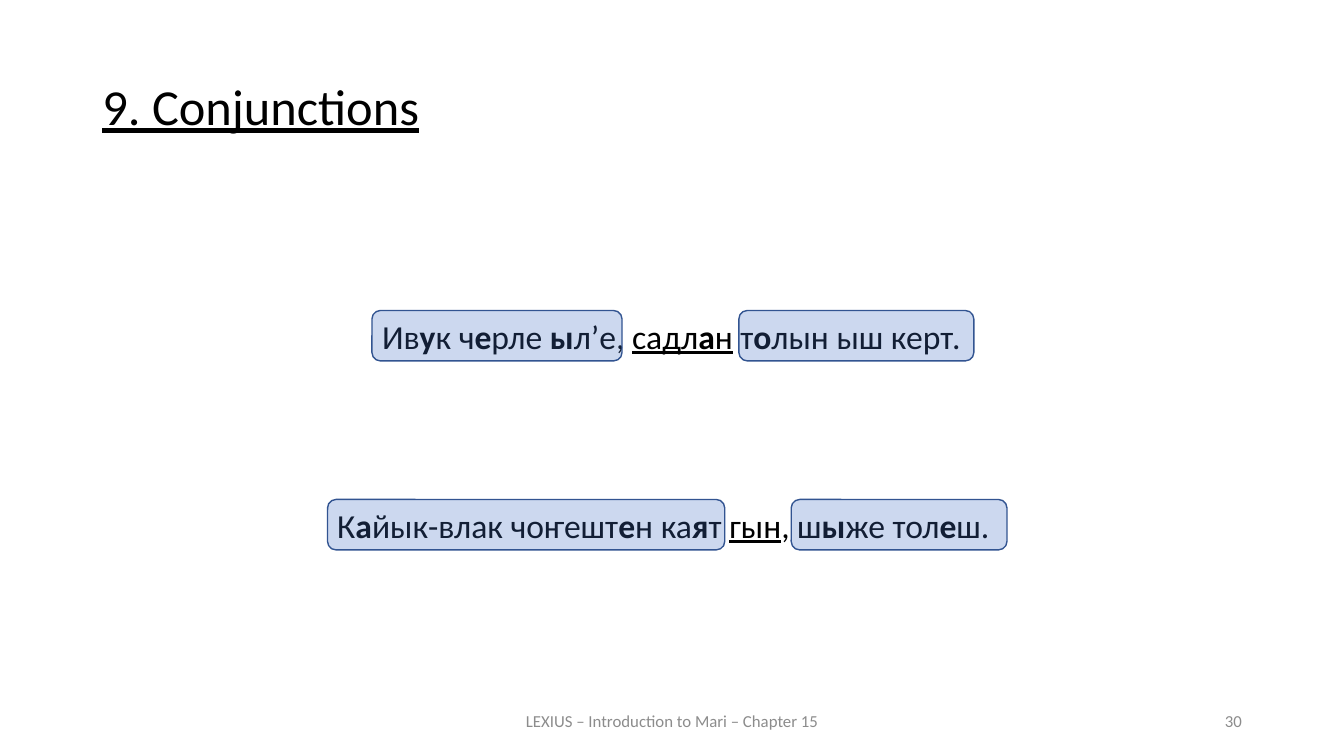
from dataclasses import dataclass

import pptx
import pptx.dml.color
import pptx.enum.shapes
import pptx.enum.text
import pptx.oxml.ns
import pptx.oxml.xmlchemy
import pptx.util

Pt = pptx.util.Pt
Color = pptx.dml.color.RGBColor
Align = pptx.enum.text.PP_ALIGN
Anchor = pptx.enum.text.MSO_ANCHOR


@dataclass(frozen=True)
class Theme:
    font: str = "Calibri"
    title_size: float = 36
    sentence_size: float = 24
    footer_size: float = 12
    ink: Color = Color(0x00, 0x00, 0x00)
    muted: Color = Color(0x8C, 0x8C, 0x8C)
    clause_fill: Color = Color(0x44, 0x72, 0xC4)
    clause_line: Color = Color(0x32, 0x54, 0x91)
    clause_opacity: int = 27  # percent


THEME = Theme()
LINE_HEIGHT = 36

# Each sentence: marked-up text, box (left, top, width), clauses (left, width).
# *bold* marks stress and _underline_ marks the conjunction.
SENTENCES = [
    ("К*а*йык-влак чоҥешт*е*н ка*я*т _гын_, ш*ы*же тол*е*ш.",
     (186.5, 356.8, 574.6), [(234, 283.7), (565.2, 154.1)]),
    ("Ив*у*к ч*е*рле *ы*л’е, _садл*а*н_ т*о*лын ыш керт.",
     (239.8, 221.8, 479.5), [(265.7, 178.6), (527.8, 167.8)]),
]


def format_span(span, size, color):
    span.font.name = THEME.font
    span.font.size = Pt(size)
    span.font.color.rgb = color


def add_title(page, text):
    title = page.shapes.title
    title.left, title.top, title.width, title.height = Pt(66), Pt(54.7), Pt(828), Pt(59.8)
    frame = title.text_frame
    frame.text = text
    frame.auto_size = pptx.enum.text.MSO_AUTO_SIZE.NONE
    frame.vertical_anchor = Anchor.TOP
    para = frame.paragraphs[0]
    para.alignment = Align.JUSTIFY
    para.line_spacing = 0.9
    span = para.runs[0]
    format_span(span, THEME.title_size, THEME.ink)
    span.font.underline = True


def add_text_box(page, left, top, width, height, alignment, anchor):
    """Add an empty wrapping text box and return its paragraph."""
    box = page.shapes.add_textbox(Pt(left), Pt(top), Pt(width), Pt(height))
    frame = box.text_frame
    frame.word_wrap = True
    frame.vertical_anchor = anchor
    para = frame.paragraphs[0]
    para.alignment = alignment
    return para


def add_footer(page, text, left, width, alignment):
    para = add_text_box(page, left, 500.4, width, 28.8, alignment, Anchor.MIDDLE)
    para.text = text
    format_span(para.runs[0], THEME.footer_size, THEME.muted)


def add_sentence(page, markup, left, top, width):
    para = add_text_box(page, left, top, width, LINE_HEIGHT, Align.CENTER, Anchor.TOP)
    for underline_index, part in enumerate(markup.split("_")):
        for bold_index, text in enumerate(part.split("*")):
            if not text:
                continue
            span = para.add_run()
            span.text = text
            format_span(span, THEME.sentence_size, THEME.ink)
            span.font.underline = underline_index % 2 == 1
            span.font.bold = bold_index % 2 == 1


def add_clause(page, left, top, width):
    """Lay a translucent rounded box over one clause."""
    box = page.shapes.add_shape(
        pptx.enum.shapes.MSO_SHAPE.ROUNDED_RECTANGLE,
        Pt(left), Pt(top), Pt(width), Pt(LINE_HEIGHT))
    box.shadow.inherit = False
    box.fill.solid()
    box.fill.fore_color.rgb = THEME.clause_fill
    color = box.element.spPr.find(".//" + pptx.oxml.ns.qn("a:srgbClr"))
    alpha = pptx.oxml.xmlchemy.OxmlElement("a:alpha")
    alpha.set("val", str(THEME.clause_opacity * 1000))
    color.append(alpha)
    box.line.color.rgb = THEME.clause_line
    box.line.width = Pt(1)


def main():
    deck = pptx.Presentation()
    deck.slide_width, deck.slide_height = Pt(960), Pt(540)
    page = deck.slides.add_slide(deck.slide_layouts.get_by_name("Title Only"))

    add_title(page, "9. Conjunctions")
    add_footer(page, "LEXIUS – Introduction to Mari – Chapter 15", 318.2, 324, Align.CENTER)
    add_footer(page, "30", 678.2, 216, Align.RIGHT)
    for markup, box, _ in SENTENCES:
        add_sentence(page, markup, *box)
    for _, (_, top, _), clauses in reversed(SENTENCES):
        for left, width in clauses:
            add_clause(page, left, top, width)

    deck.save("out.pptx")


if __name__ == "__main__":
    main()
